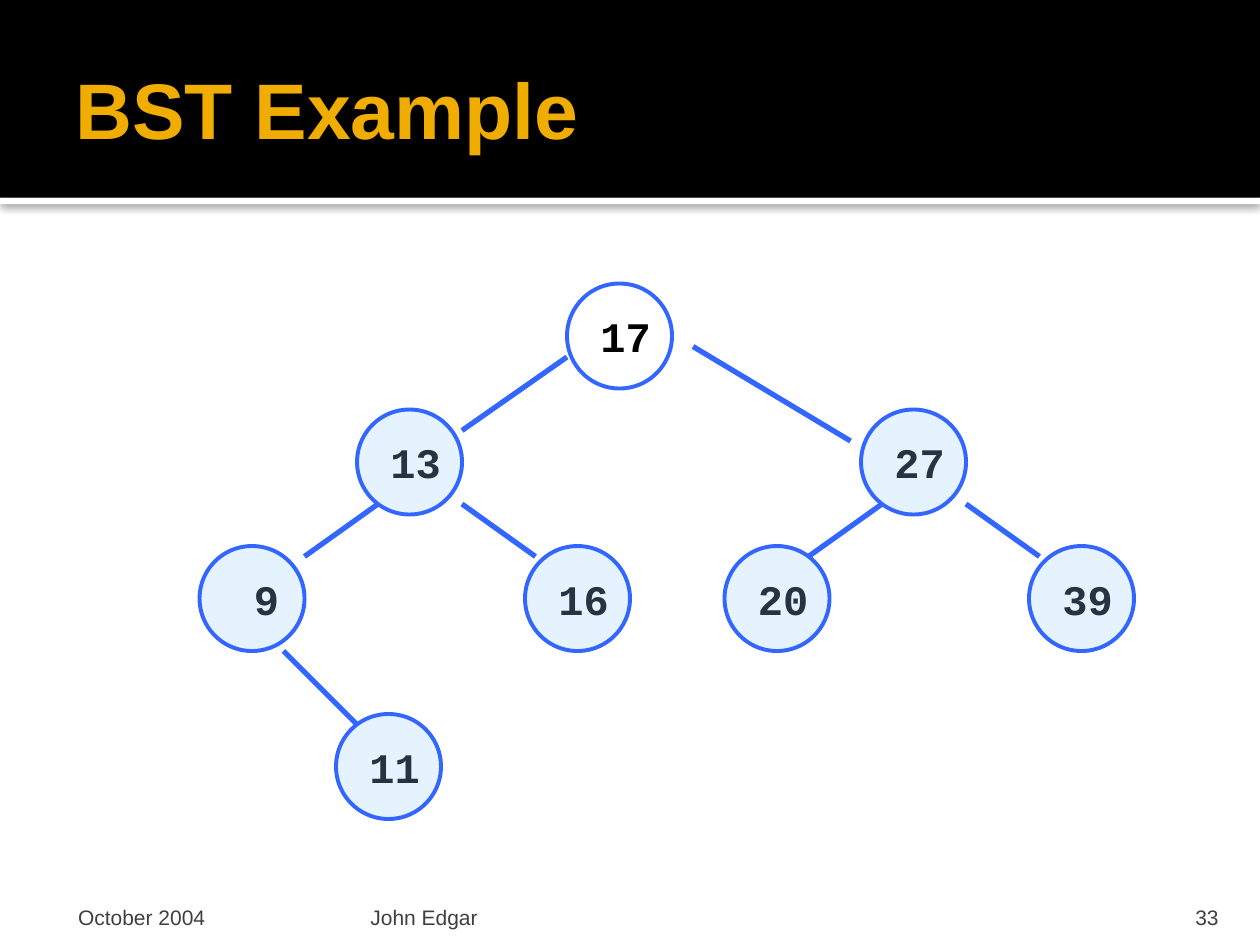
from lxml import etree
from pptx import Presentation, util as u
from pptx.dml.color import RGBColor
from pptx.enum import shapes, text
from pptx.oxml.ns import qn

CELL = 1 / 12
SIZE = 10
BLUE, PALE, GREY = "3366FF", "99CCFF", "3F3F3F"

NODES = [
    ("17", 54, 27), ("13", 34, 39), ("27", 82, 39), ("9", 19, 52),
    ("16", 50, 52), ("20", 69, 52), ("39", 98, 52), ("11", 32, 68),
]
EDGES = [
    (54, 34, 44, 41), (66, 33, 81, 42),
    (36, 48, 29, 53), (44, 48, 51, 53),
    (84, 48, 77, 53), (92, 48, 99, 53),
    (27, 62, 34, 69),
]
FOOT = [
    ("October 2004", 0.5, 2.33, 0.12, "l"),
    ("John Edgar", 2.89, 6.02, 0.05, "l"),
    ("33", 8.97, 0.8, 0.1, "r"),
]
ALIGN = {"l": text.PP_ALIGN.LEFT, "r": text.PP_ALIGN.RIGHT}

deck = Presentation()
deck.slide_width, deck.slide_height = u.Inches(10), u.Inches(7.5)
page = deck.slides.add_slide(deck.slide_layouts[6])


def paint(fill, color):
    fill.solid()
    fill.fore_color.rgb = RGBColor.from_string(color)


def grid(*cells):
    return [u.Inches(c * CELL) for c in cells]


def write(words, left, top, width, height, size, color, font="Arial",
          bold=False, align="l", anchor=text.MSO_ANCHOR.TOP,
          inset=(0.1, 0.05, 0.1, 0.05)):
    box = page.shapes.add_textbox(*map(u.Inches, (left, top, width, height)))
    frame = box.text_frame
    frame.word_wrap = True
    frame.vertical_anchor = anchor
    (frame.margin_left, frame.margin_top,
     frame.margin_right, frame.margin_bottom) = map(u.Inches, inset)
    para = frame.paragraphs[0]
    para.alignment = ALIGN[align]
    run = para.add_run()
    run.text = words
    run.font.name, run.font.size, run.font.bold = font, u.Pt(size), bold
    paint(run.font.fill, color)


def band(top, height, color):
    bar = page.shapes.add_shape(shapes.MSO_SHAPE.RECTANGLE, 0, u.Inches(top),
                                deck.slide_width, u.Inches(height))
    bar.shadow.inherit = False
    paint(bar.fill, color)
    bar.line.fill.background()
    return bar


def shade(shape):
    effects = shape._element.spPr.find(qn("a:effectLst"))
    glow = etree.SubElement(effects, qn("a:outerShdw"), blurRad=str(u.Pt(5)),
                            dist=str(u.Pt(0.8)), dir="5400000", rotWithShape="0")
    tone = etree.SubElement(glow, qn("a:srgbClr"), val="000000")
    etree.SubElement(tone, qn("a:alpha"), val="60000")


def label(name, col, row):
    shift = 2 if len(name) > 1 else 4
    write(name, (col + shift) * CELL, (row + 2) * CELL, 0.75, 0.5, 24,
          "000000", font="Courier New", bold=True)


def edge(*ends):
    line = page.shapes.add_connector(shapes.MSO_CONNECTOR.STRAIGHT, *grid(*ends))
    paint(line.line.fill, BLUE)
    line.line.width = u.Pt(3)
    etree.SubElement(line._element.spPr, qn("a:effectLst"))


def ring(col, row, root):
    disc = page.shapes.add_shape(shapes.MSO_SHAPE.OVAL,
                                 *grid(col, row, SIZE, SIZE))
    disc.shadow.inherit = False
    paint(disc.line.fill, BLUE)
    disc.line.width = u.Pt(2.25)
    if root:
        disc.fill.background()
    else:
        paint(disc.fill, PALE)
        tone = disc._element.spPr.find(qn("a:solidFill"))[0]
        etree.SubElement(tone, qn("a:alpha"), val="25000")


shade(band(1.57, 0.05, "FFFFFF"))
band(0, 1.57, "000000")
write("BST Example", 0.5, 0.17, 9, 1.37, 45, "F0AD00", bold=True,
      anchor=text.MSO_ANCHOR.MIDDLE, inset=(0.1, 0.05, 0.05, 0.05))
for words, left, width, pad, align in FOOT:
    right = pad if align == "r" else 0.05
    write(words, left, 7.08, width, 0.3, 12, GREY, align=align,
          anchor=text.MSO_ANCHOR.BOTTOM, inset=(pad, 0.05, right, 0))

for node in NODES:
    label(*node)
for ends in EDGES:
    edge(*ends)
for name, col, row in NODES:
    ring(col, row, name == NODES[0][0])

deck.save("out.pptx")
